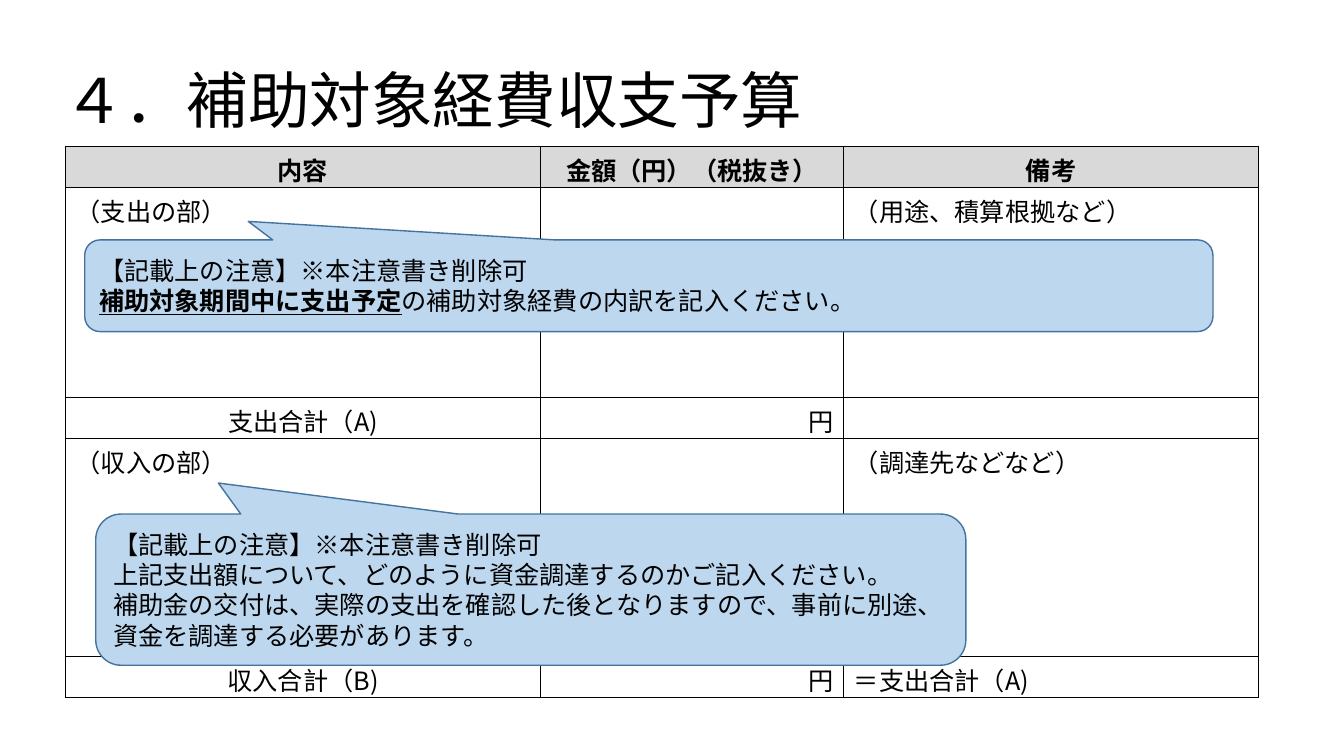
from lxml.etree import SubElement
from pptx import Presentation
from pptx.dml.color import RGBColor
from pptx.enum.shapes import MSO_SHAPE
from pptx.enum.text import MSO_ANCHOR, PP_ALIGN
from pptx.oxml import parse_xml
from pptx.oxml.ns import nsdecls, qn
from pptx.util import Inches, Pt

LEFT, CENTER, RIGHT = PP_ALIGN.LEFT, PP_ALIGN.CENTER, PP_ALIGN.RIGHT


def color(hex_string):
    return RGBColor.from_string(hex_string)


class BudgetPage:
    """Holds the style and the current slide."""

    font = "Noto Sans CJK JP"
    ink = "000000"
    header_fill = "D9D9D9"
    note_fill, note_line = "BDD7EE", "43739E"

    def __init__(self, page):
        self.page = page

    def add_span(self, para, text, size=18, strong=False, underline=False):
        span = para.add_run()
        span.text = text
        span.font.size = Pt(size)
        span.font.bold = strong
        span.font.underline = underline
        span.font.color.rgb = color(self.ink)
        span.font.name = self.font
        east_asian = SubElement(span.font._element, qn("a:ea"))
        east_asian.set("typeface", self.font)

    def add_title(self, text, left, top, width, height):
        box = self.page.shapes.add_textbox(
            Inches(left), Inches(top), Inches(width), Inches(height))
        frame = box.text_frame
        frame.word_wrap = True
        frame.vertical_anchor = MSO_ANCHOR.MIDDLE
        para = frame.paragraphs[0]
        para.line_spacing = 0.9
        self.add_span(para, text, size=44)

    def add_borders(self, cell):
        properties = cell._tc.get_or_add_tcPr()
        for index, side in enumerate(("lnL", "lnR", "lnT", "lnB")):
            properties.insert(index, parse_xml(
                f'<a:{side} {nsdecls("a")} w="12700"><a:solidFill>'
                f'<a:srgbClr val="{self.ink}"/></a:solidFill></a:{side}>'))

    def add_table(self, rows, left, top, widths, heights, header_align, total_rows):
        table = self.page.shapes.add_table(
            len(heights), len(widths), Inches(left), Inches(top),
            Inches(sum(widths)), Inches(sum(heights))).table
        for column, width in zip(table.columns, widths):
            column.width = Inches(width)
        for row, height in zip(table.rows, heights):
            row.height = Inches(height)
        for r, texts in enumerate(rows):
            header = r == 0
            if header:
                aligns = [header_align] * len(widths)
            else:
                aligns = [CENTER, RIGHT, LEFT] if r in total_rows else [LEFT] * 3
            for c, text in enumerate(texts):
                cell = table.cell(r, c)
                if header:
                    cell.fill.solid()
                    cell.fill.fore_color.rgb = color(self.header_fill)
                else:
                    cell.fill.background()
                self.add_borders(cell)
                para = cell.text_frame.paragraphs[0]
                para.alignment = aligns[c]
                if text:
                    self.add_span(para, text, strong=header)

    def add_note(self, lines, left, top, width, height, pointer):
        note = self.page.shapes.add_shape(
            MSO_SHAPE.ROUNDED_RECTANGULAR_CALLOUT,
            Inches(left), Inches(top), Inches(width), Inches(height))
        note.shadow.inherit = False
        note.adjustments[0], note.adjustments[1] = pointer
        note.fill.solid()
        note.fill.fore_color.rgb = color(self.note_fill)
        note.line.color.rgb = color(self.note_line)
        note.line.width = Pt(1)
        frame = note.text_frame
        frame.word_wrap = True
        frame.vertical_anchor = MSO_ANCHOR.MIDDLE
        for index, spans in enumerate(lines):
            para = frame.add_paragraph() if index else frame.paragraphs[0]
            para.alignment = LEFT
            for text, strong in spans:
                self.add_span(para, text, strong=strong, underline=strong)


def main():
    deck = Presentation()
    deck.slide_width, deck.slide_height = Inches(13.33), Inches(7.5)
    budget = BudgetPage(deck.slides.add_slide(deck.slide_layouts[6]))

    # Title
    budget.add_title("４．補助対象経費収支予算", 0.53, 0.3, 11.5, 1.45)

    # Budget table: header, then expenses and income, each with a total
    rows = [
        ["内容", "金額（円）（税抜き）", "備考"],
        ["（支出の部）", "", "（用途、積算根拠など）"],
        ["支出合計（A)", "円", ""],
        ["（収入の部）", "", "（調達先などなど）"],
        ["収入合計（B)", "円", "＝支出合計（A)"],
    ]
    budget.add_table(rows, 0.65, 1.45, widths=[4.71, 3.01, 4.11],
                     heights=[0.41, 2.08, 0.41, 2.16, 0.41],
                     header_align=CENTER, total_rows=(2, 4))

    # Notes on filling in each part
    heading = [("【記載上の注意】※本注意書き削除可", False)]
    budget.add_note(
        [heading,
         [("補助対象期間中に支出予定", True),
          ("の補助対象経費の内訳を記入ください。", False)]],
        0.84, 2.38, 11.19, 0.91, pointer=(-0.355, -0.702))
    budget.add_note(
        [heading,
         [("上記支出額について、どのように資金調達するのかご記入ください。", False)],
         [("補助金の交付は、実際の支出を確認した後となりますので、事前に別途、"
           "資金を調達する必要があります。", False)]],
        0.95, 5.1, 8.63, 1.5, pointer=(-0.359, -0.705))

    deck.save("out.pptx")


if __name__ == "__main__":
    main()
